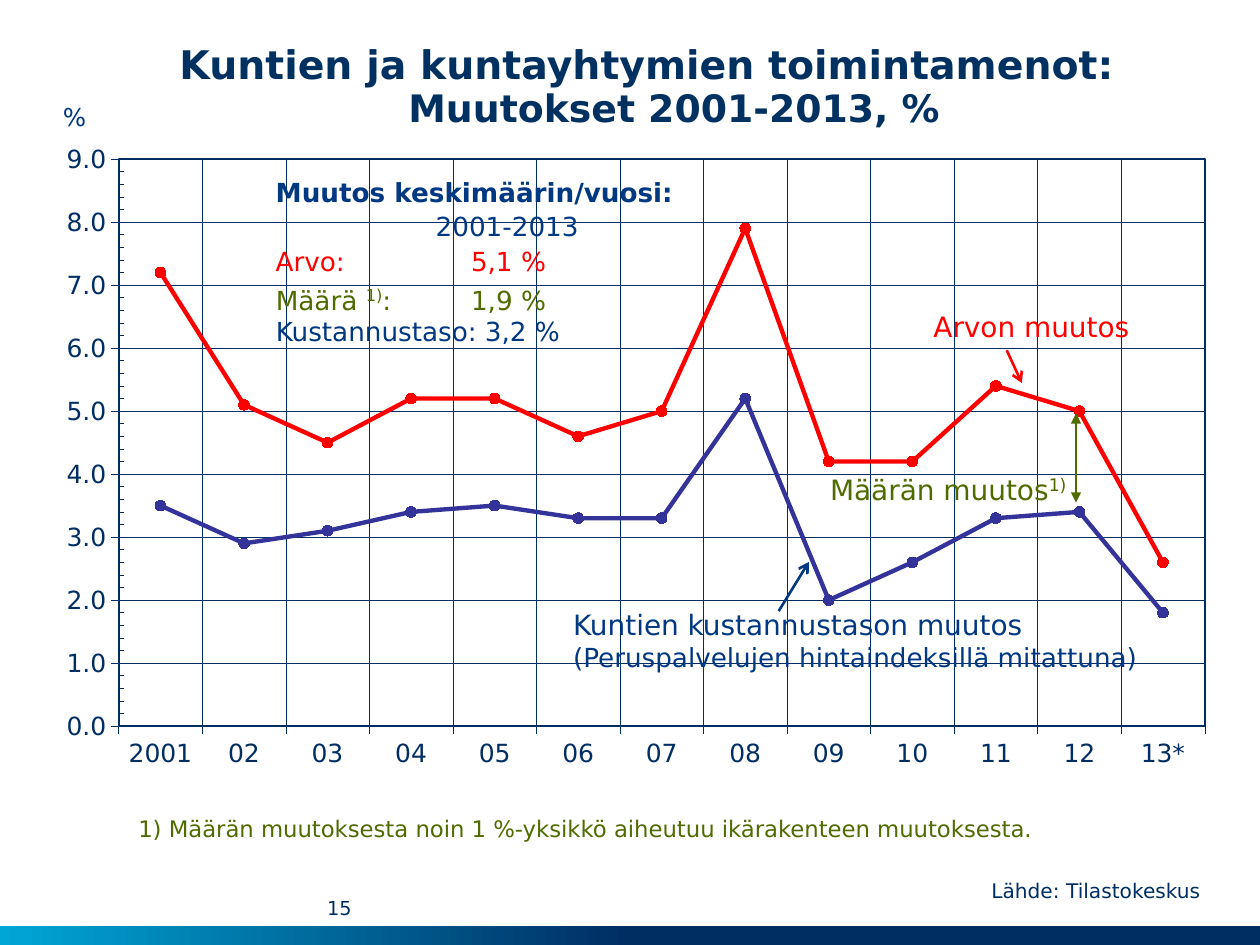
"""Build the slide on yearly changes in municipal operating costs."""
from lxml.etree import SubElement as Sub
from pptx import Presentation
from pptx.chart.data import CategoryChartData
from pptx.dml.color import RGBColor
from pptx.enum.chart import XL_CHART_TYPE as Kind, XL_MARKER_STYLE as Mark, XL_TICK_MARK as Tick
from pptx.enum.dml import MSO_LINE as Dash
from pptx.enum.shapes import MSO_CONNECTOR as Conn, MSO_SHAPE as Geo
from pptx.enum.text import MSO_ANCHOR as Anchor, PP_ALIGN as Align
from pptx.oxml import parse_xml
from pptx.oxml.ns import nsdecls, qn
from pptx.util import Inches, Pt

NAVY = RGBColor(0x00, 0x2E, 0x63)
INK = RGBColor(0x00, 0x31, 0x61)
BLUE = RGBColor(0x00, 0x38, 0x82)
CYAN = RGBColor(0x00, 0xA6, 0xD6)
RED = RGBColor(0xFF, 0x00, 0x00)
VIOLET = RGBColor(0x33, 0x33, 0x99)
OLIVE = RGBColor(0x50, 0x6B, 0x00)
FONT = "DejaVu Sans"

YEARS = ["2001", "02", "03", "04", "05", "06", "07", "08", "09", "10", "11", "12", "13*"]
SERIES = [
    ("Arvon muutos", RED, [7.2, 5.1, 4.5, 5.2, 5.2, 4.6, 5, 7.9, 4.2, 4.2, 5.4, 5, 2.6]),
    ("Kustannustason muutos", VIOLET,
     [3.5, 2.9, 3.1, 3.4, 3.5, 3.3, 3.3, 5.2, 2, 2.6, 3.3, 3.4, 1.8]),
]
PLOT = {"x": 0.058, "y": 0.039, "w": 0.939, "h": 0.864}

LABELS = [
    ((7.77, 6.92, 1.96, 0.29), NAVY, [[("Lähde: Tilastokeskus", 11.5)]]),
    ((4.45, 4.77, 4.74, 0.62), BLUE, [[("Kuntien kustannustason muutos", 16)],
                                      [("(Peruspalvelujen hintaindeksillä mitattuna)", 15)]]),
    ((6.49, 3.69, 2.13, 0.37), OLIVE, [[("Määrän muutos", 16), ("1)", 17, "up")]]),
    ((7.31, 2.41, 1.79, 0.37), RED, [[("Arvon muutos", 16)]]),
    ((2.09, 1.35, 3.44, 0.35), BLUE, [[("Muutos keskimäärin/vuosi:", 15, "bold")]]),
    ((3.36, 1.62, 1.36, 0.35), BLUE, [[("2001-2013", 15)]]),
    ((2.09, 1.9, 3.34, 0.35), RED, [[("Arvo:\t5,1 %", 15)]]),
    ((2.09, 2.19, 3.15, 0.35), OLIVE, [[("Määrä ", 15), ("1)", 16, "up"), (":\t1,9 %", 15)]]),
    ((2.09, 2.45, 3.08, 0.35), BLUE, [[("Kustannustaso: 3,2 %", 15)]]),
    ((0.4, 0.76, 0.41, 0.34), BLUE, [[("%", 14)]]),
    ((1, 6.42, 7.77, 0.32), OLIVE,
     [[("1) Määrän muutoksesta noin 1 %-yksikkö aiheutuu ikärakenteen muutoksesta.", 13)]]),
]
TITLE = [[("Kuntien ja kuntayhtymien toimintamenot:", 22.5, "bold")],
         [("Muutokset 2001-2013, %", 21.6, "bold")]]
ARROWS = [
    ((7.99, 2.78), (8.11, 3.04), RED, 1.5, {"tailEnd": "arrow"}),
    ((6.18, 4.85), (6.42, 4.46), BLUE, 1.5, {"tailEnd": "arrow"}),
    ((8.54, 3.28), (8.54, 3.99), OLIVE, 0.75, {"headEnd": "triangle", "tailEnd": "triangle"}),
]
TAB = 1.55


def add_text(slide, box, color, paras):
    frame = slide.shapes.add_textbox(*map(Inches, box)).text_frame
    frame.word_wrap = True
    for i, runs in enumerate(paras):
        para = frame.paragraphs[0] if i == 0 else frame.add_paragraph()
        if any("\t" in run[0] for run in runs):
            tabs = Sub(para._p.get_or_add_pPr(), qn("a:tabLst"))
            Sub(tabs, qn("a:tab"), pos=str(Inches(TAB)), algn="l")
        for words, size, *style in runs:
            run = para.add_run()
            run.text = words
            font = run.font
            font.name, font.size, font.bold = FONT, Pt(size), "bold" in style
            font.color.rgb = color
            if "up" in style:
                run._r.get_or_add_rPr().set("baseline", "30000")
    return frame


def add_band(slide):
    band = slide.shapes.add_shape(Geo.RECTANGLE, 0, Inches(7.35), Inches(10), Inches(0.16))
    band.shadow.inherit = False
    band.line.fill.background()
    band.fill.gradient()
    band.fill.gradient_angle = 0
    for stop, (color, pos) in zip(band.fill.gradient_stops, [(CYAN, 0), (NAVY, 0.5)]):
        stop.color.rgb, stop.position = color, pos


def style_axis(axis):
    axis.has_major_gridlines = True
    axis.major_tick_mark = Tick.OUTSIDE
    font = axis.tick_labels.font
    font.name, font.size, font.bold = FONT, Pt(14.3), False
    font.color.rgb = NAVY
    for line in (axis.format.line, axis.major_gridlines.format.line):
        line.color.rgb, line.width = NAVY, Pt(0.25)
    axis.major_gridlines.format.line.dash_style = Dash.ROUND_DOT


def set_plot(chart):
    area = chart._chartSpace.chart.plotArea
    for old in area.findall(qn("c:layout")):
        area.remove(old)
    modes = "".join(f'<c:{k}Mode val="edge"/>' for k in "xy")
    sizes = "".join(f'<c:{k} val="{v}"/>' for k, v in PLOT.items())
    area.insert(0, parse_xml(
        f'<c:layout {nsdecls("c")}><c:manualLayout><c:layoutTarget val="inner"/>'
        f'{modes}{sizes}</c:manualLayout></c:layout>'))
    area.append(parse_xml(
        f'<c:spPr {nsdecls("c", "a")}><a:noFill/><a:ln w="{Pt(1)}"><a:solidFill>'
        f'<a:srgbClr val="{NAVY}"/></a:solidFill></a:ln></c:spPr>'))


def add_graph(slide):
    data = CategoryChartData(number_format="0.0")
    data.categories = YEARS
    for name, _, vals in SERIES:
        data.add_series(name, vals)
    box = map(Inches, (0.41, 1.06, 9.18, 5.21))
    chart = slide.shapes.add_chart(Kind.LINE_MARKERS, *box, data).chart
    chart.has_legend = chart.has_title = False
    chart.font.name, chart.font.size = FONT, Pt(14.3)
    chart.font.color.rgb = NAVY
    chart.plots[0].vary_by_categories = False
    for line, (_, color, _) in zip(chart.plots[0].series, SERIES):
        line.smooth = False
        line.format.line.color.rgb, line.format.line.width = color, Pt(2.5)
        mark = line.marker
        mark.style, mark.size = Mark.CIRCLE, 6
        mark.format.fill.solid()
        mark.format.fill.fore_color.rgb = color
        mark.format.line.color.rgb = color
    axis = chart.value_axis
    axis.minimum_scale, axis.maximum_scale, axis.major_unit = 0, 9, 1
    axis.minor_tick_mark = Tick.INSIDE
    axis.tick_labels.number_format = "0.0"
    axis.tick_labels.number_format_is_linked = False
    style_axis(axis)
    style_axis(chart.category_axis)
    set_plot(chart)


def add_arrow(slide, start, end, color, width, heads):
    arrow = slide.shapes.add_connector(Conn.STRAIGHT, *map(Inches, start + end))
    arrow.line.color.rgb, arrow.line.width = color, Pt(width)
    props = arrow._element.spPr
    for tag, kind in heads.items():
        Sub(props.find(qn("a:ln")), qn(f"a:{tag}"), type=kind)
    Sub(props, qn("a:effectLst"))


def main():
    deck = Presentation()
    deck.slide_width, deck.slide_height = Inches(10), Inches(7.5)
    slide = deck.slides.add_slide(deck.slide_layouts[6])
    add_band(slide)
    title = add_text(slide, (1.08, 0.21, 8.11, 0.88), INK, TITLE)
    title.vertical_anchor = Anchor.BOTTOM
    title.margin_left = title.margin_right = 0
    for para in title.paragraphs:
        para.alignment, para.line_spacing = Align.CENTER, 0.95
    title.paragraphs[1]._p.get_or_add_pPr().set("marL", str(Inches(0.43)))
    add_graph(slide)
    for label in LABELS:
        add_text(slide, *label)
    for arrow in ARROWS:
        add_arrow(slide, *arrow)
    page = add_text(slide, (2.48, 7.06, 0.43, 0.29), NAVY, [[("15", 11)]])
    page.vertical_anchor = Anchor.MIDDLE
    page.margin_left = page.margin_right = page.margin_top = page.margin_bottom = 0
    page.paragraphs[0].alignment = Align.CENTER
    deck.save("out.pptx")


if __name__ == "__main__":
    main()
